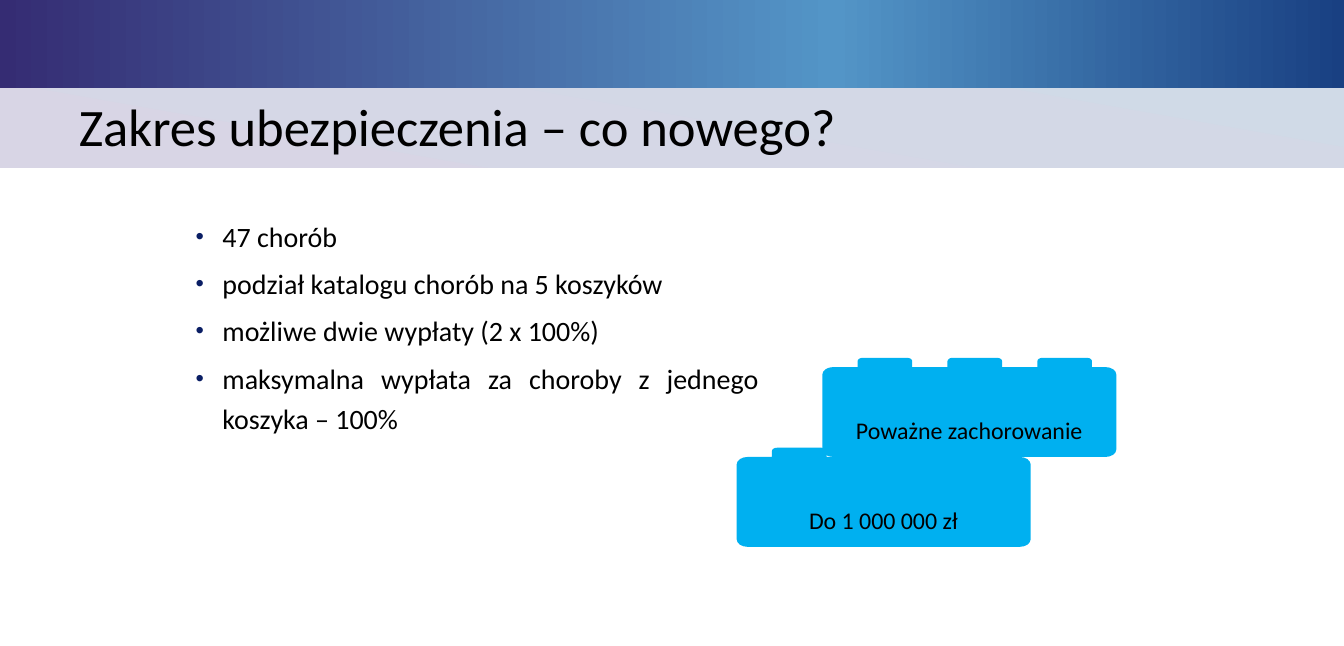
from math import cos, sin, radians
from lxml import etree
from pptx import Presentation
from pptx.dml.color import RGBColor as RGB
from pptx.enum.shapes import MSO_SHAPE as Shape
from pptx.enum.text import MSO_ANCHOR as Anchor, PP_ALIGN as Align
from pptx.oxml import parse_xml
from pptx.oxml.ns import nsdecls, qn
from pptx.util import Inches, Pt

# Content
TITLE = "Zakres ubezpieczenia – co nowego?"
POINTS = [
    "47 chorób",
    "podział katalogu chorób na 5 koszyków",
    "możliwe dwie wypłaty (2 x 100%)",
    "maksymalna wypłata za choroby z jednego koszyka – 100%",
]
BRICKS = [("Poważne zachorowanie", 9.79, 4.26), ("Do 1 000 000 zł", 8.77, 5.33)]

# Style
WIDTH, HEIGHT = 16, 7.69
FONT = "Calibri"
BLACK, CYAN, NAVY = RGB(0, 0, 0), RGB(0, 0xB0, 0xF0), RGB(0x0A, 0x1E, 0x64)
PALE, LILAC = RGB(0xD0, 0xDA, 0xE7), RGB(0xD8, 0xD5, 0xE5)
VIOLET, SKY, BLUE = RGB(0x35, 0x2C, 0x73), RGB(0x53, 0x95, 0xC7), RGB(0x19, 0x40, 0x82)
BANDS = [  # top, height, angle, gradient stops
    (0.73, 1.27, 100, [(0, PALE), (100, LILAC)]),
    (-0.04, 1.09, 0, [(0, VIOLET), (62, SKY), (100, BLUE)]),
]

# Brick measures: body, then evenly spaced studs on top
BRICK_W, BRICK_H, LIP = 3.5, 1.18, 0.11
STUDS, STUD_X, STUD_W, STEP = 3, 0.42, 0.65, 1.07
BODY_R, STUD_R = (0.13, 0.09), (0.06, 0.04)

prs = Presentation()
prs.slide_width, prs.slide_height = Inches(WIDTH), Inches(HEIGHT)
slide = prs.slides.add_slide(prs.slide_layouts[6])
shapes = slide.shapes


def style(para, size):
    para.font.name, para.font.size = FONT, Pt(size)
    para.font.color.rgb = BLACK


def band(top, height, angle, stops):
    box = shapes.add_shape(Shape.RECTANGLE, 0, Inches(top), Inches(WIDTH), Inches(height))
    box.shadow.inherit = False
    box.line.fill.background()
    marks = "".join(f'<a:gs pos="{pos * 1000}"><a:srgbClr val="{color}"/></a:gs>'
                    for pos, color in stops)
    grad = parse_xml(f'<a:gradFill {nsdecls("a")}><a:gsLst>{marks}</a:gsLst>'
                     f'<a:lin ang="{angle * 60000}" scaled="0"/></a:gradFill>')
    box._element.spPr.find(qn("a:prstGeom")).addnext(grad)


def text_box(left, top, width, height):
    frame = shapes.add_textbox(*map(Inches, (left, top, width, height))).text_frame
    frame.word_wrap = True
    return frame


def bullet(para):
    props = para._p.get_or_add_pPr()
    props.set("marL", str(Inches(0.32)))
    props.set("indent", str(-Inches(0.32)))
    color = etree.SubElement(props, qn("a:buClr"))
    etree.SubElement(color, qn("a:srgbClr"), val=str(NAVY))
    etree.SubElement(props, qn("a:buSzPct"), val="85000")
    etree.SubElement(props, qn("a:buFont"), typeface="Arial")
    etree.SubElement(props, qn("a:buChar"), char="•")


def corner(x, y, radii, start):
    """Quarter arc inside the corner at x, y, going clockwise from start."""
    rx, ry = radii
    mid = radians(start + 45)
    cx = x - rx * (1 if cos(mid) > 0 else -1)
    cy = y - ry * (1 if sin(mid) > 0 else -1)
    turns = [radians(start + 22.5 * i) for i in range(5)]
    return [(cx + rx * cos(t), cy + ry * sin(t)) for t in turns]


def outline():
    path = corner(0, LIP, BODY_R, 180)
    for i in range(STUDS):
        x = STUD_X + i * STEP
        end = x + STUD_W
        path += [(x, LIP), *corner(x, 0, STUD_R, 180),
                 *corner(end, 0, STUD_R, 270), (end, LIP)]
    path += corner(BRICK_W, LIP, BODY_R, 270)
    path += corner(BRICK_W, BRICK_H, BODY_R, 0)
    return path + corner(0, BRICK_H, BODY_R, 90)


def brick(label, left, top):
    path = [(Inches(left + x), Inches(top + y)) for x, y in outline()]
    pen = shapes.build_freeform(*path[0])
    pen.add_line_segments(path[1:], close=True)
    block = pen.convert_to_shape()
    block.shadow.inherit = False
    block.fill.solid()
    block.fill.fore_color.rgb = CYAN
    block.line.fill.background()
    frame = block.text_frame
    frame.word_wrap = True
    frame.vertical_anchor = Anchor.TOP
    frame.margin_left = frame.margin_right = frame.margin_bottom = 0
    frame.margin_top = Inches(0.69)
    para = frame.paragraphs[0]
    para.text, para.alignment = label, Align.CENTER
    style(para, 20.5)


# Header
for row in BANDS:
    band(*row)
head = text_box(0.84, 0.58, 14.14, 1.93)
head.vertical_anchor = Anchor.MIDDLE
para = head.paragraphs[0]
para.text, para.line_spacing = TITLE, 0.9
style(para, 45.1)

# Bullet list
body = text_box(2.23, 2.48, 6.9, 4.03)
for i, point in enumerate(POINTS):
    para = body.add_paragraph() if i else body.paragraphs[0]
    para.text, para.alignment = point, Align.JUSTIFY
    bullet(para)
    para.line_spacing = 1.2
    if i:
        para.space_before = Pt(6)
    style(para, 24)

# Bricks
for row in BRICKS:
    brick(*row)

prs.save("out.pptx")
